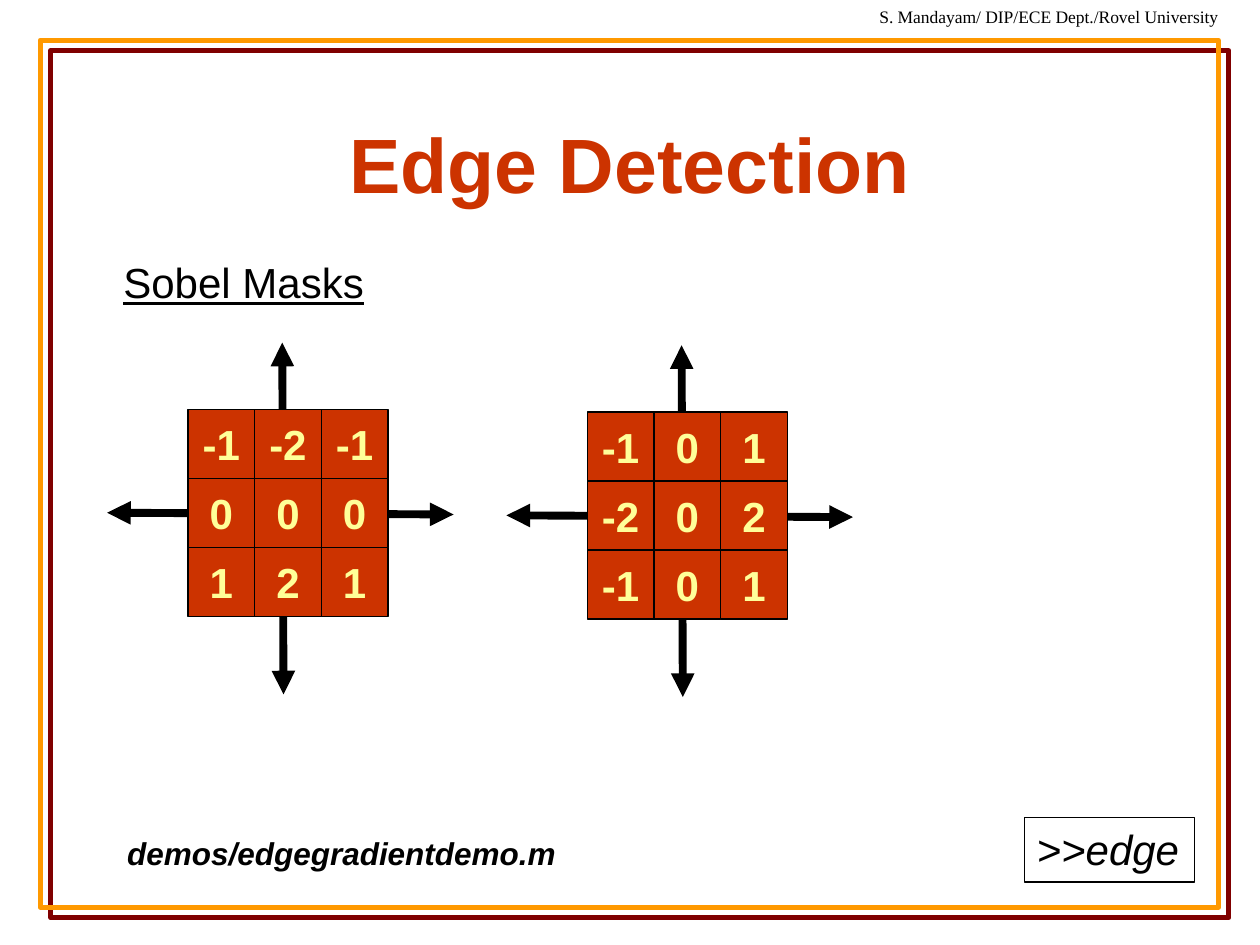
from dataclasses import dataclass

from lxml import etree
from pptx import Presentation
from pptx.dml import color
from pptx.enum import shapes as es, text as et
from pptx.oxml import ns
from pptx.util import Pt


@dataclass(frozen=True)
class Theme:
    sans: str = "Arial"
    serif: str = "Times New Roman"
    ink: str = "000000"
    red: str = "CC3300"
    pale: str = "FFFF99"
    gold: str = "FF9900"
    wine: str = "800000"
    small: int = 10
    note: int = 18
    body: int = 24
    head: int = 44
    thin: float = 0.75
    rim: float = 3
    bold: float = 4.5


T = Theme()
ALIGN = et.PP_ALIGN
ANCHOR = et.MSO_ANCHOR
GROW = et.MSO_AUTO_SIZE.SHAPE_TO_FIT_TEXT


def rgb(code):
    return color.RGBColor.from_string(code)


def put(item, values):
    for key, value in values.items():
        setattr(item, key, value)


def write(shape, words, size, tint=T.ink, face=T.sans, align=ALIGN.LEFT, frame=None, **style):
    body = shape.text_frame
    put(body, {"word_wrap": False, **(frame or {})})
    para = body.paragraphs[0]
    para.alignment = align
    run = para.add_run()
    run.text = words
    put(run.font, {"name": face, "size": Pt(size), **style})
    run.font.color.rgb = rgb(tint)


def rect(parts, box, edge, width, fill=None):
    shape = parts.add_shape(es.MSO_SHAPE.RECTANGLE, *map(Pt, box))
    shape.shadow.inherit = False
    if fill:
        shape.fill.solid()
        shape.fill.fore_color.rgb = rgb(fill)
    else:
        shape.fill.background()
    shape.line.color.rgb = rgb(edge)
    shape.line.width = Pt(width)
    return shape


def label(parts, box, words, size, **style):
    write(parts.add_textbox(*map(Pt, box)), words, size, **style)


def axis(parts, ends):
    line = parts.add_connector(es.MSO_CONNECTOR.STRAIGHT, *map(Pt, ends))
    line.line.color.rgb = rgb(T.ink)
    line.line.width = Pt(T.bold)
    for tag in ("a:headEnd", "a:tailEnd"):
        etree.SubElement(line.get_or_add_ln(), ns.qn(tag), type="triangle")
    etree.SubElement(line._element.spPr, ns.qn("a:effectLst"))


def border(parts, box):
    x, y, w, h = box
    for step, tint in ((6, T.wine), (0, T.gold)):
        rect(parts, (x + step, y + step, w, h), tint, T.rim)


def header(parts, box):
    x, y, w, h = box
    label(parts, (x + 495.4, y, 213.8, 19.4), "S. Mandayam/ DIP/ECE Dept./Rovel University",
          T.small, face=T.serif, frame={"auto_size": GROW})
    label(parts, (x + 54, y + 48.2, w - 108, h - 48.2), "Edge Detection", T.head, tint=T.red,
          align=ALIGN.CENTER, bold=True,
          frame={"word_wrap": True, "vertical_anchor": ANCHOR.MIDDLE})


def mask(parts, box, grid):
    x, y, w, h = box
    group = parts.add_group_shape().shapes
    axis(group, (x + 100.1, y, x + 100.8, y + h))
    axis(group, (x, y + 97.2, x + w, y + 98.2))
    wide, tall = 38.1, 39.4
    for row, line in enumerate(grid):
        for col, value in enumerate(line):
            place = (x + 46.2 + col * wide, y + 38.2 + row * tall, wide, tall)
            cell = rect(group, place, T.ink, T.thin, T.red)
            write(cell, str(value), T.body, tint=T.pale, align=ALIGN.CENTER, bold=True,
                  frame={"vertical_anchor": ANCHOR.MIDDLE})


def footer(parts, box):
    x, y, w, h = box
    edge = rect(parts, (x + w - 97.2, y, 97.2, h), T.ink, T.thin)
    write(edge, ">>edge", T.body, italic=True,
          frame={"auto_size": GROW, "vertical_anchor": ANCHOR.TOP})
    label(parts, (x, y + 5.8, 314.6, 28.8), "demos/edgegradientdemo.m", T.note,
          bold=True, italic=True,
          frame={"word_wrap": True, "auto_size": GROW, "margin_left": Pt(43.2)})


def main():
    deck = Presentation()
    put(deck, {"slide_width": Pt(720), "slide_height": Pt(540)})
    parts = deck.slides.add_slide(deck.slide_layouts[6]).shapes
    border(parts, (23, 23, 673.2, 495.4))
    header(parts, (0, 0, 720, 138.2))
    mask(parts, (61.2, 195.8, 198, 201), ((-1, -2, -1), (0, 0, 0), (1, 2, 1)))
    label(parts, (63.4, 143.3, 151.9, 36), "Sobel Masks", T.body, underline=True,
          frame={"auto_size": GROW})
    mask(parts, (289.4, 197.3, 198, 201), ((-1, 0, 1), (-2, 0, 2), (-1, 0, 1)))
    footer(parts, (29.5, 467.3, 653, 36.7))
    deck.save("out.pptx")


if __name__ == "__main__":
    main()
